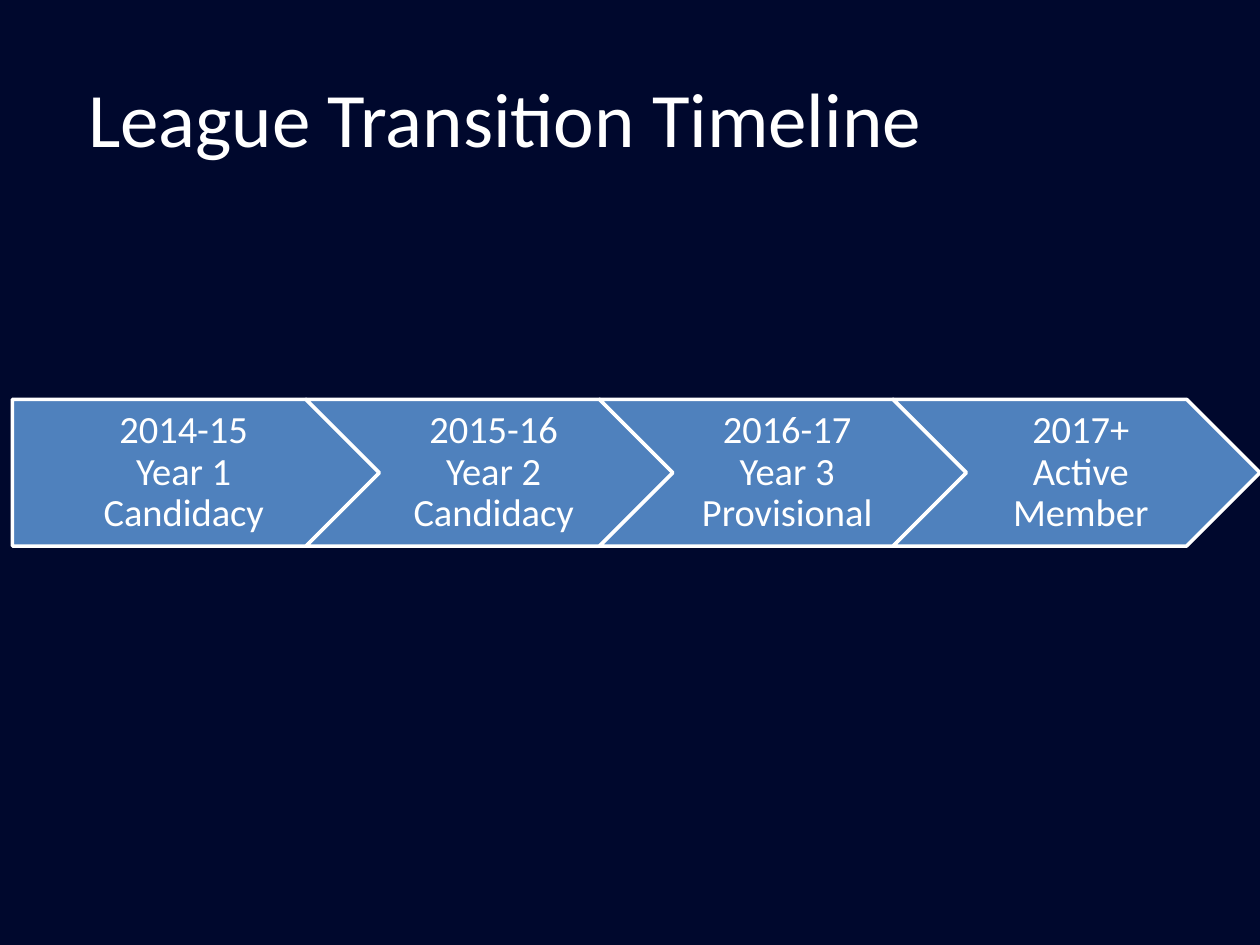
from pptx import Presentation
from pptx import util as u
from pptx.dml.color import RGBColor
from pptx.enum import shapes, text

FONT = "Calibri"
STAGES = [
    ("2014-15", "Year 1", "Candidacy"),
    ("2015-16", "Year 2", "Candidacy"),
    ("2016-17", "Year 3", "Provisional"),
    ("2017+", "Active Member"),
]


def paint(color_format, color):
    """Set a fill or font colour from a hex string."""
    color_format.rgb = RGBColor.from_string(color)


def add_span(para, words, size):
    """Add one white run to a paragraph."""
    span = para.add_run()
    span.text = words
    span.font.name = FONT
    span.font.size = u.Pt(size)
    paint(span.font.color, "FFFFFF")


def place_title(page, words, left, top, width, height):
    """Fill the title placeholder and move it into the given box."""
    title = page.shapes.title
    title.left, title.top = u.Cm(left), u.Cm(top)
    title.width, title.height = u.Cm(width), u.Cm(height)
    title.text_frame.vertical_anchor = text.MSO_ANCHOR.MIDDLE
    para = title.text_frame.paragraphs[0]
    para.alignment = text.PP_ALIGN.LEFT
    add_span(para, words, 44)


def add_stage(parent, kind, lines, inset, left, top, width, height):
    """Draw one arrow of the timeline with its centred lines."""
    arrow = parent.shapes.add_shape(
        kind, u.Cm(left), u.Cm(top), u.Cm(width), u.Cm(height))
    arrow.shadow.inherit = False
    arrow.fill.solid()
    paint(arrow.fill.fore_color, "4F81BD")
    paint(arrow.line.color, "FFFFFF")
    arrow.line.width = u.Pt(2)
    frame = arrow.text_frame
    frame.word_wrap = True
    frame.vertical_anchor = text.MSO_ANCHOR.MIDDLE
    frame.margin_left, frame.margin_right = u.Cm(inset), u.Cm(0.08)
    frame.margin_top = frame.margin_bottom = u.Cm(0.15)
    para = frame.paragraphs[0]
    para.alignment = text.PP_ALIGN.CENTER
    para.line_spacing = 0.9
    for index, words in enumerate(lines):
        if index:
            para.add_line_break()
        add_span(para, words, 22)


def place_timeline(page, stages, left, top, width, height):
    """Chain the stages across the box, each overlapping the next by a fifth."""
    group = page.shapes.add_group_shape()
    arrow_width = width / (1 + 0.8 * (len(stages) - 1))
    for index, lines in enumerate(stages):
        kind = shapes.MSO_SHAPE.CHEVRON if index else shapes.MSO_SHAPE.PENTAGON
        add_stage(group, kind, lines, 0.25 if index else 0.33,
                  left + index * 0.8 * arrow_width, top, arrow_width, height)


def main():
    """Build and save the deck."""
    deck = Presentation()
    deck.slide_width, deck.slide_height = u.Cm(25.4), u.Cm(19.05)
    page = deck.slides.add_slide(deck.slide_layouts[5])
    page.background.fill.solid()
    paint(page.background.fill.fore_color, "00082D")
    place_title(page, "League Transition Timeline", 1.52, 0.76, 22.6, 3.18)
    place_timeline(page, STAGES, 0.25, 8.05, 25.15, 2.96)
    deck.save("out.pptx")


if __name__ == "__main__":
    main()
